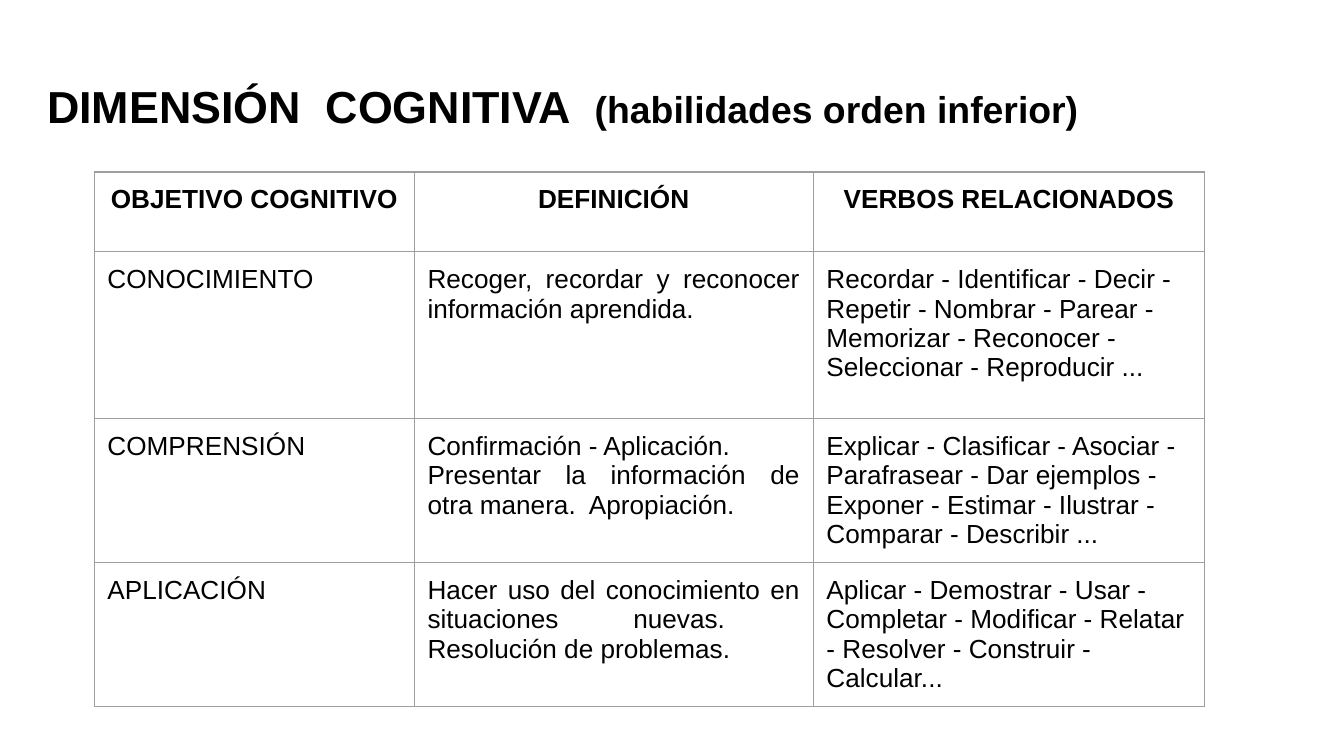
import pptx
import pptx.util
import pptx.dml.color
import pptx.enum.text
import pptx.oxml.ns
import lxml.etree

Cm = pptx.util.Cm
Pt = pptx.util.Pt
ALIGN = pptx.enum.text.PP_ALIGN
BLACK = pptx.dml.color.RGBColor(0, 0, 0)
GREY = pptx.dml.color.RGBColor(0x9E, 0x9E, 0x9E)
INSET = Cm(0.25)

COLS = (6.05, 7.54, 7.4)
ROWS = (1.51, 3.15, 2.72, 2.72)
SIDES = (ALIGN.LEFT, ALIGN.JUSTIFY, ALIGN.LEFT)
CELLS = (
    ("OBJETIVO COGNITIVO", "DEFINICIÓN", "VERBOS RELACIONADOS"),
    ("CONOCIMIENTO",
     "Recoger, recordar y reconocer información aprendida.",
     "Recordar - Identificar - Decir - Repetir - Nombrar - Parear - "
     "Memorizar - Reconocer - Seleccionar - Reproducir ..."),
    ("COMPRENSIÓN",
     "Confirmación - Aplicación.\n"
     "Presentar la información de otra manera.  Apropiación.",
     "Explicar - Clasificar - Asociar - Parafrasear - Dar ejemplos - "
     "Exponer - Estimar - Ilustrar - Comparar - Describir ..."),
    ("APLICACIÓN",
     "Hacer uso del conocimiento en situaciones nuevas.  "
     "Resolución de problemas.",
     "Aplicar - Demostrar - Usar -  Completar - Modificar - Relatar - "
     "Resolver - Construir - Calcular..."),
)


def style(run, size, bold):
    run.font.name = "Arial"
    run.font.size = Pt(size)
    run.font.bold = bold
    run.font.color.rgb = BLACK


def inset(item):
    item.margin_left = item.margin_right = INSET
    item.margin_top = item.margin_bottom = INSET


def border(cell):
    qn = pptx.oxml.ns.qn
    props = cell._tc.get_or_add_tcPr()
    for spot, tag in enumerate(("a:lnL", "a:lnR", "a:lnT", "a:lnB")):
        line = lxml.etree.Element(qn(tag), w=str(Pt(0.75)))
        fill = lxml.etree.SubElement(line, qn("a:solidFill"))
        lxml.etree.SubElement(fill, qn("a:srgbClr"), val=str(GREY))
        props.insert(spot, line)


def add_title(slide, left, top, width, height):
    title = slide.shapes.title
    title.left, title.top = left, top
    title.width, title.height = width, height
    frame = title.text_frame
    frame.auto_size = pptx.enum.text.MSO_AUTO_SIZE.NONE
    frame.vertical_anchor = pptx.enum.text.MSO_ANCHOR.BOTTOM
    inset(frame)
    line = frame.paragraphs[0]
    line.alignment = ALIGN.LEFT
    for text, size in (("DIMENSIÓN  COGNITIVA  ", 24),
                       ("(habilidades orden inferior)", 20)):
        run = line.add_run()
        run.text = text
        style(run, size, True)


def add_grid(slide, left, top, width, height):
    shape = slide.shapes.add_table(len(ROWS), len(COLS),
                                   left, top, width, height)
    table = shape.table
    for col, share in zip(table.columns, COLS):
        col.width = int(width * share / sum(COLS))
    for row, share in zip(table.rows, ROWS):
        row.height = int(height * share / sum(ROWS))
    for r, texts in enumerate(CELLS):
        for c, text in enumerate(texts):
            cell = table.cell(r, c)
            cell.fill.background()
            border(cell)
            inset(cell)
            cell.text_frame.text = text
            for line in cell.text_frame.paragraphs:
                line.alignment = SIDES[c] if r else ALIGN.CENTER
                for run in line.runs:
                    style(run, 14, r == 0)


def main():
    deck = pptx.Presentation()
    deck.slide_width, deck.slide_height = Cm(25.4), Cm(14.29)
    slide = deck.slides.add_slide(deck.slide_layouts[5])
    add_title(slide, Cm(0.64), Cm(1.3), Cm(21.95), Cm(1.45))
    add_grid(slide, Cm(1.78), Cm(3.25), Cm(sum(COLS)), Cm(sum(ROWS)))
    deck.save("out.pptx")


if __name__ == "__main__":
    main()
